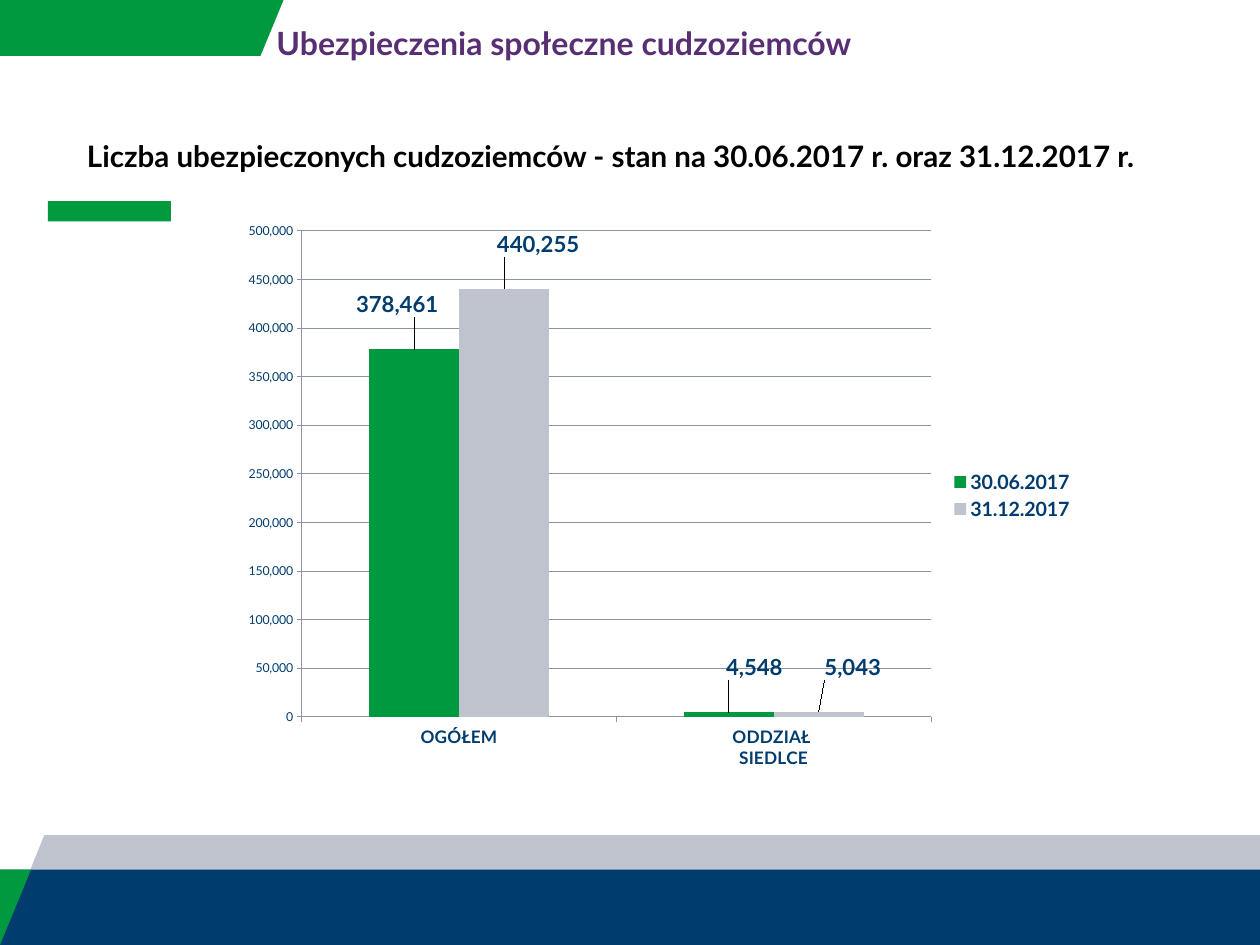
from lxml.etree import SubElement
from pptx import Presentation
from pptx.chart.data import CategoryChartData
from pptx.dml.color import RGBColor
from pptx.enum.chart import XL_CHART_TYPE, XL_LABEL_POSITION, XL_LEGEND_POSITION, XL_TICK_MARK
from pptx.enum.shapes import MSO_SHAPE
from pptx.enum.text import MSO_ANCHOR, MSO_AUTO_SIZE, PP_ALIGN
from pptx.oxml.ns import qn
from pptx.util import Cm, Pt

GREEN = RGBColor(0x00, 0x99, 0x3F)
MARKER_GREEN = RGBColor(0x02, 0x9A, 0x3F)
GREY = RGBColor(0xBE, 0xC3, 0xCE)
NAVY = RGBColor(0x00, 0x3D, 0x6E)
PURPLE = RGBColor(0x59, 0x2F, 0x74)
BLACK = RGBColor(0x00, 0x00, 0x00)
LINE_GREY = RGBColor(0x8B, 0x93, 0xA5)

FONT = "Lato"
WIDTH, HEIGHT = 36.12, 27.1
FOOTER_TOP, NAVY_TOP = 23.95, 24.94

CATEGORIES = ["OGÓŁEM", "ODDZIAŁ \nSIEDLCE"]
SERIES = [
    ("30.06.2017", (378461, 4548), GREEN),
    ("31.12.2017", (440255, 5043), GREY),
]
LABEL_OFFSETS = [(-0.02, -0.05), (0.03, -0.05), (0.04, -0.05), (0.04, -0.05)]


def set_attrs(obj, values):
    for name, value in values.items():
        setattr(obj, name, value)


def set_font(font, size, color, bold=False):
    set_attrs(font, {"name": FONT, "size": Pt(size), "bold": bold})
    font.color.rgb = color


def paint(sp, color):
    sp.shadow.inherit = False
    sp.fill.solid()
    sp.fill.fore_color.rgb = color
    sp.line.fill.background()


def add_block(slide, left, top, width, height, color):
    sp = slide.shapes.add_shape(
        MSO_SHAPE.RECTANGLE, Cm(left), Cm(top), Cm(width), Cm(height))
    paint(sp, color)


def add_polygon(slide, points, color):
    start, *rest = [(Cm(x), Cm(y)) for x, y in points]
    builder = slide.shapes.build_freeform(*start)
    builder.add_line_segments(rest, close=True)
    paint(builder.convert_to_shape(), color)


def write_line(sp, text, size, color, frame, paragraph):
    tf = sp.text_frame
    set_attrs(tf, {"word_wrap": True, "auto_size": MSO_AUTO_SIZE.NONE, **frame})
    p = tf.paragraphs[0]
    set_attrs(p, {"space_before": Pt(0), **paragraph})
    r = p.add_run()
    r.text = text
    set_font(r.font, size, color, bold=True)


def add_title(slide, text):
    sp = slide.shapes.title
    set_attrs(sp, {"left": Cm(7.67), "top": Cm(0), "width": Cm(24.41), "height": Cm(2.95)})
    write_line(sp, text, 26, PURPLE, {"vertical_anchor": MSO_ANCHOR.TOP},
               {"alignment": PP_ALIGN.LEFT, "line_spacing": 1.5})


def add_subtitle(slide, text):
    sp = slide.shapes.add_textbox(Cm(1.3), Cm(3.25), Cm(32.41), Cm(1.96))
    write_line(sp, text, 24, BLACK,
               {"vertical_anchor": MSO_ANCHOR.BOTTOM, "margin_bottom": Cm(0.25)},
               {"alignment": PP_ALIGN.CENTER})


def add_layout(parent, index, values):
    layout = parent.makeelement(qn("c:layout"), {})
    manual = SubElement(layout, qn("c:manualLayout"))
    for name, value in values.items():
        SubElement(manual, qn(f"c:{name}")).set("val", str(value))
    parent.insert(index, layout)


def format_axes(chart):
    for axis in (chart.category_axis, chart.value_axis):
        set_attrs(axis, {"major_tick_mark": XL_TICK_MARK.OUTSIDE,
                         "minor_tick_mark": XL_TICK_MARK.NONE})
        axis.format.line.color.rgb = LINE_GREY
    set_font(chart.category_axis.tick_labels.font, 14, NAVY, bold=True)
    axis = chart.value_axis
    set_attrs(axis, {"minimum_scale": 0, "maximum_scale": 500000,
                     "major_unit": 50000, "has_major_gridlines": True})
    axis.major_gridlines.format.line.color.rgb = LINE_GREY
    set_attrs(axis.tick_labels, {"number_format": "#,##0", "number_format_is_linked": False})
    set_font(axis.tick_labels.font, 10, NAVY)


def format_series(chart):
    plot = chart.plots[0]
    set_attrs(plot, {"gap_width": 150, "overlap": 0, "vary_by_categories": False})
    for series, (_, values, color) in zip(plot.series, SERIES):
        series.format.fill.solid()
        series.format.fill.fore_color.rgb = color
        for i in range(len(values)):
            label = series.points[i].data_label
            set_font(label.font, 18, NAVY, bold=True)
            label.position = XL_LABEL_POSITION.OUTSIDE_END
    for label, (x, y) in zip(chart.element.findall(".//" + qn("c:dLbl")), LABEL_OFFSETS):
        add_layout(label, 1, {"x": x, "y": y})


def add_insured_chart(slide):
    data = CategoryChartData(number_format="#,##0")
    data.categories = CATEGORIES
    for name, values, _ in SERIES:
        data.add_series(name, values)
    chart = slide.shapes.add_chart(
        XL_CHART_TYPE.COLUMN_CLUSTERED, Cm(6.65), Cm(6.07), Cm(24.41), Cm(16.28), data).chart
    set_attrs(chart, {"has_title": False, "has_legend": True})
    set_font(chart.font, 10, NAVY)
    set_attrs(chart.legend, {"position": XL_LEGEND_POSITION.RIGHT, "include_in_layout": False})
    set_font(chart.legend.font, 16, NAVY, bold=True)
    format_axes(chart)
    format_series(chart)
    area = chart.element.find(".//" + qn("c:plotArea"))
    for layout in area.findall(qn("c:layout")):
        area.remove(layout)
    add_layout(area, 0, {"layoutTarget": "inner", "xMode": "edge", "yMode": "edge",
                         "x": 0.082, "y": 0.034, "w": 0.739, "h": 0.856})


def add_frame(slide):
    add_polygon(slide, [(0, 0), (8.13, 0), (7.47, 1.6), (0, 1.6)], GREEN)
    add_polygon(slide, [(0, HEIGHT), (1.27, FOOTER_TOP), (WIDTH, FOOTER_TOP),
                        (WIDTH, HEIGHT)], GREY)
    add_block(slide, 0, NAVY_TOP, WIDTH, HEIGHT - NAVY_TOP, NAVY)
    add_polygon(slide, [(0, NAVY_TOP), (0, HEIGHT), (0.89, NAVY_TOP)], GREEN)


def main():
    prs = Presentation()
    set_attrs(prs, {"slide_width": Cm(WIDTH), "slide_height": Cm(HEIGHT)})
    slide = prs.slides.add_slide(prs.slide_layouts[5])
    add_frame(slide)
    add_title(slide, "Ubezpieczenia społeczne cudzoziemców")
    add_block(slide, 1.37, 5.77, 3.53, 0.58, MARKER_GREEN)
    add_subtitle(slide, "Liczba ubezpieczonych cudzoziemców - stan na 30.06.2017 r. oraz 31.12.2017 r.")
    add_insured_chart(slide)
    prs.save("out.pptx")


if __name__ == "__main__":
    main()
